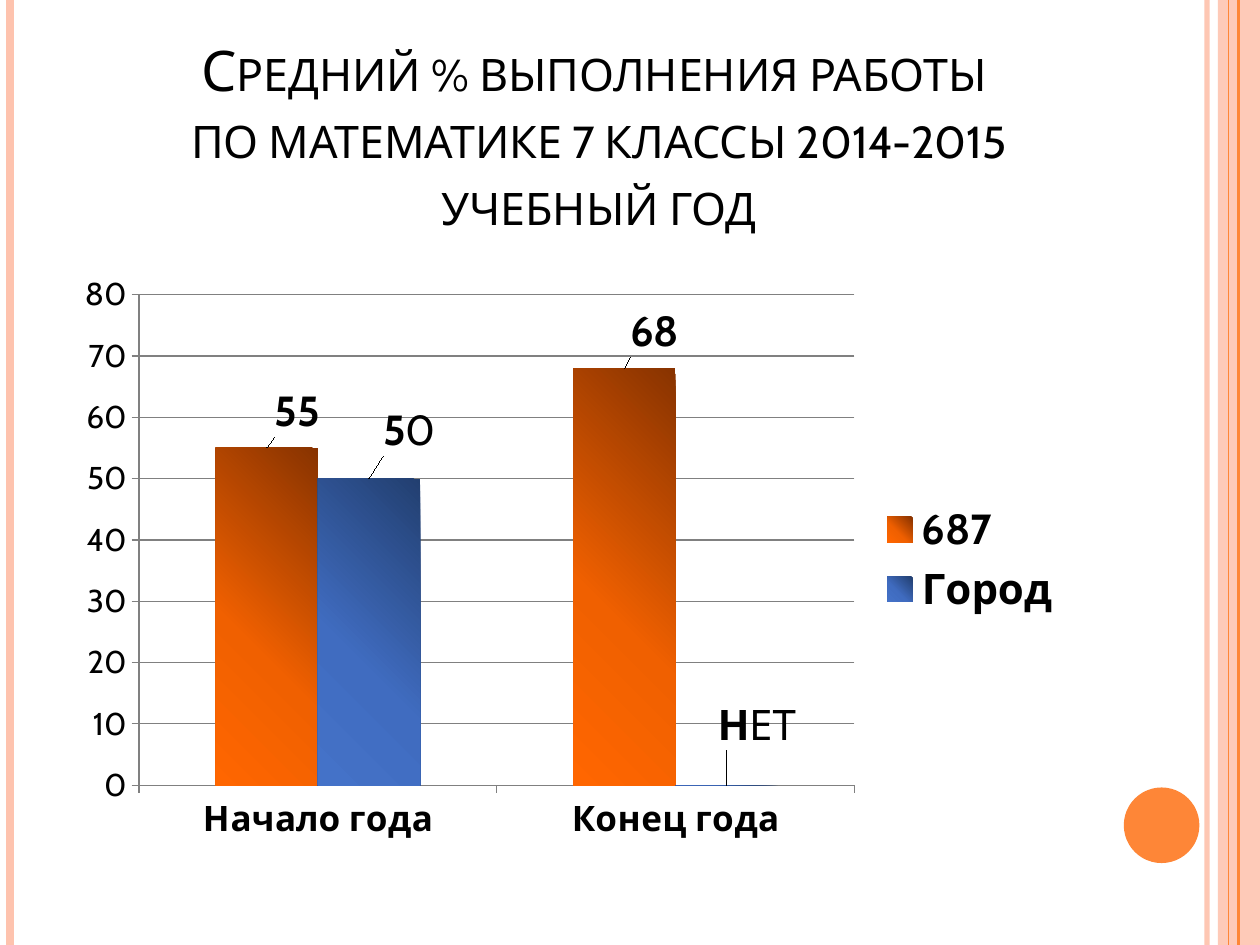
from typing import NamedTuple

import pptx
import pptx.chart.data
import pptx.dml.color
import pptx.enum.chart
import pptx.enum.shapes
import pptx.enum.text
import pptx.oxml
import pptx.oxml.ns
import pptx.util

Pt = pptx.util.Pt
FONT = "Cabin"
NAMESPACES = pptx.oxml.ns.nsdecls("a", "c")
SLIDE_HEIGHT = 540


class Rule(NamedTuple):
    x: float
    color: str
    width: float
    opacity: int = 100


class Label(NamedTuple):
    shift_x: float
    shift_y: float
    bold: str = ""
    regular: str = ""


class Series(NamedTuple):
    name: str
    values: tuple
    gradient: tuple
    labels: tuple


RULES = [
    Rule(689.8, "FEC3AE", 3, 93),
    Rule(5.8, "FEC3AE", 4.5),
    Rule(707.8, "FE8637", 1.5),
    Rule(702, "FE8637", 0.75),
]
SERIES = [
    Series("687", (55, 68), ("FF6600", "F06000", "883300"),
           (Label(0.03, -0.01), Label(0.03, -0.01))),
    Series("Город", (50, 0), ("4472C8", "406CC0", "223F70"),
           (Label(0.04, -0.03, "5", "0"), Label(0.03, -0.05, "Н", "ЕТ"))),
]


def rgb(color: str):
    return pptx.dml.color.RGBColor.from_string(color)


def format_font(font, **values) -> None:
    font.color.rgb = rgb("000000")
    for name, value in {"name": FONT, "bold": False, **values}.items():
        setattr(font, name, value)


def set_opacity(element, percent: int) -> None:
    for color in element.xpath(".//a:srgbClr"):
        color.append(pptx.oxml.parse_xml(
            f'<a:alpha {NAMESPACES} val="{percent * 1000}"/>'))


def manual_layout(**values):
    parts = "".join(f'<c:{name} val="{value}"/>' for name, value in values.items())
    return pptx.oxml.parse_xml(
        f"<c:layout {NAMESPACES}><c:manualLayout>{parts}</c:manualLayout></c:layout>")


def draw_rule(slide, rule: Rule) -> None:
    line = slide.shapes.add_connector(
        pptx.enum.shapes.MSO_CONNECTOR.STRAIGHT,
        Pt(rule.x), Pt(0), Pt(rule.x), Pt(SLIDE_HEIGHT))
    line.line.color.rgb = rgb(rule.color)
    line.line.width = Pt(rule.width)
    properties = line._element.spPr
    if rule.opacity < 100:
        set_opacity(properties, rule.opacity)
    properties.append(pptx.oxml.parse_xml(f"<a:effectLst {NAMESPACES}/>"))


def draw_shape(slide, kind, left: float, top: float, width: float, height: float,
               color: str):
    shape = slide.shapes.add_shape(kind, Pt(left), Pt(top), Pt(width), Pt(height))
    shape.shadow.inherit = False
    shape.fill.solid()
    shape.fill.fore_color.rgb = rgb(color)
    shape.line.fill.background()
    return shape


def fill_radial(series, colors: tuple) -> None:
    stops = "".join(
        f'<a:gs pos="{position}"><a:srgbClr val="{color}"/></a:gs>'
        for position, color in zip((0, 40000, 100000), colors))
    series._element.get_or_add_spPr().append(pptx.oxml.parse_xml(
        f'<a:gradFill {NAMESPACES} rotWithShape="1"><a:gsLst>{stops}</a:gsLst>'
        '<a:path path="circle"><a:fillToRect t="100000" r="100000"/></a:path>'
        "</a:gradFill>"))


def label_point(series, index: int, label: Label) -> None:
    data_label = series.points[index].data_label
    if label.bold:
        paragraph = data_label.text_frame.paragraphs[0]
        for text, bold in ((label.bold, True), (label.regular, False)):
            run = paragraph.add_run()
            run.text = text
            format_font(run.font, size=Pt(24), bold=bold)
    else:
        format_font(data_label.font, size=Pt(24), bold=True)
    data_label.position = pptx.enum.chart.XL_LABEL_POSITION.OUTSIDE_END
    element = series._element.xpath(f'.//c:dLbl[c:idx/@val="{index}"]')[0]
    element.insert(1, manual_layout(x=label.shift_x, y=label.shift_y))


def draw_title(slide) -> None:
    title = slide.shapes.title
    title.left, title.top, title.width, title.height = (
        Pt(48.2), Pt(49), Pt(588.2), Pt(90))
    frame = title.text_frame
    frame.text = ("Средний % выполнения работы \v"
                  "по математике 7 классы 2014-2015 учебный год")
    for name, value in {
        "word_wrap": True,
        "auto_size": pptx.enum.text.MSO_AUTO_SIZE.NONE,
        "vertical_anchor": pptx.enum.text.MSO_ANCHOR.BOTTOM,
    }.items():
        setattr(frame, name, value)
    paragraph = frame.paragraphs[0]
    paragraph.alignment = pptx.enum.text.PP_ALIGN.CENTER
    for run in paragraph.runs:
        format_font(run.font, size=Pt(32))
        run.font._element.set("cap", "small")


def draw_chart(slide) -> None:
    data = pptx.chart.data.CategoryChartData()
    data.categories = ["Начало года", "Конец года"]
    for item in SERIES:
        data.add_series(item.name, item.values)
    chart = slide.shapes.add_chart(
        pptx.enum.chart.XL_CHART_TYPE.COLUMN_CLUSTERED,
        Pt(36.7), Pt(151.2), Pt(578.2), Pt(337), data).chart
    format_font(chart.font, size=Pt(18))
    chart.has_title = False

    # Axes and gridlines
    value_axis, category_axis = chart.value_axis, chart.category_axis
    for name, value in {"minimum_scale": 0, "maximum_scale": 80, "major_unit": 10,
                        "has_major_gridlines": True}.items():
        setattr(value_axis, name, value)
    for axis in (value_axis, category_axis):
        axis.major_tick_mark = pptx.enum.chart.XL_TICK_MARK.OUTSIDE
        axis.format.line.color.rgb = rgb("808080")
    value_axis.major_gridlines.format.line.color.rgb = rgb("808080")
    format_font(category_axis.tick_labels.font, size=Pt(20), bold=True)

    # Columns and their labels
    plot = chart.plots[0]
    plot.vary_by_categories = False
    plot.gap_width, plot.overlap = 150, 0
    for series, item in zip(plot.series, SERIES):
        series.invert_if_negative = False
        fill_radial(series, item.gradient)
        for index, label in enumerate(item.labels):
            label_point(series, index, label)

    # Legend and plot area
    chart.has_legend = True
    legend = chart.legend
    legend.position = pptx.enum.chart.XL_LEGEND_POSITION.RIGHT
    legend.include_in_layout = False
    format_font(legend.font, size=Pt(24), bold=True)
    plot_area = chart._chartSpace.xpath("c:chart/c:plotArea")[0]
    for layout in plot_area.xpath("c:layout"):
        plot_area.remove(layout)
    plot_area.insert(0, manual_layout(
        layoutTarget="inner", xMode="edge", yMode="edge",
        x=0.074, y=0.051, w=0.707, h=0.832))


def main() -> None:
    presentation = pptx.Presentation()
    presentation.slide_width, presentation.slide_height = Pt(720), Pt(SLIDE_HEIGHT)
    slide = presentation.slides.add_slide(presentation.slide_layouts[5])

    # Side decoration
    shapes = pptx.enum.shapes.MSO_SHAPE
    band = draw_shape(slide, shapes.RECTANGLE, 696, 0, 24, SLIDE_HEIGHT, "FEC3AE")
    set_opacity(band._element.spPr, 87)
    for rule in RULES:
        draw_rule(slide, rule)
    draw_shape(slide, shapes.OVAL, 642.2, 450, 43.2, 43.2, "FE8637")

    draw_title(slide)
    draw_chart(slide)
    presentation.save("out.pptx")


if __name__ == "__main__":
    main()
